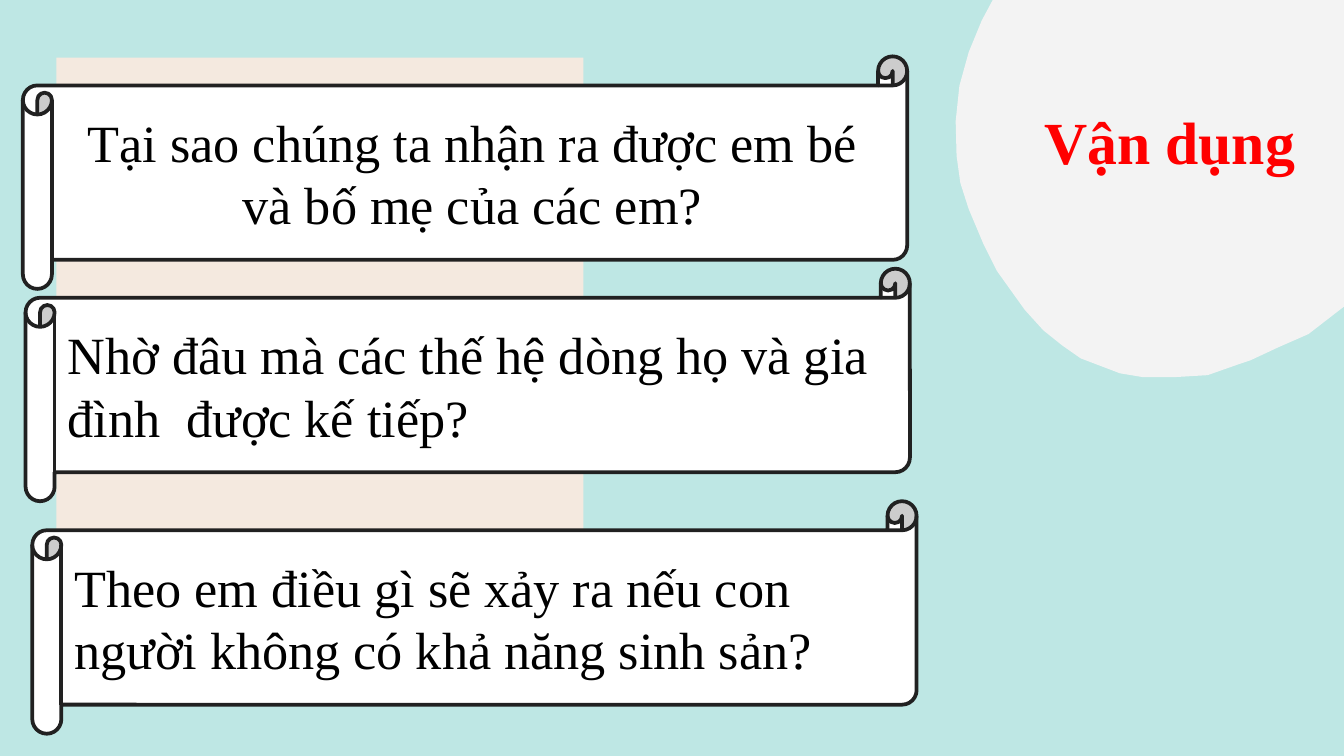
from pptx import Presentation
from pptx.dml.color import RGBColor
from pptx.enum.shapes import MSO_SHAPE as SHAPE
from pptx.enum.text import MSO_ANCHOR as ANCHOR, MSO_AUTO_SIZE as AUTO, PP_ALIGN as ALIGN
from pptx.util import Pt

COLORS = {
    "background": "BEE7E4",
    "panel": "F4E9DF",
    "blob": "F3F3F3",
    "scroll": "FFFFFF",
    "outline": "212121",
    "text": "000000",
    "title": "FF0000",
}
FONT = "Times New Roman"

# Outline of the pale blob in points, counter-clockwise from the upper right
BLOB = [
    (750, -58), (741, -66), (734, -71), (715, -83), (670, -96), (664, -96),
    (649, -94), (617, -82), (593, -71), (575, -55), (562, -45), (542, -19),
    (526, 11), (519, 28), (514, 46), (512, 65), (512.5, 83.5), (514.5, 98),
    (519, 112), (527, 131), (534, 145), (549, 166), (559, 177), (569, 185),
    (579, 192), (600, 200), (612, 202), (624, 202), (630, 202), (647, 201),
    (664, 195), (670, 193), (685, 186), (701, 179), (723, 162), (730, 158),
    (737, 158), (755, 169), (787, 189), (786, 184), (779, 166), (774, 153),
    (762, 125), (762, 116), (768, 100), (780, 65), (786, 50), (789, 37),
    (792, 17), (791, 6), (769, -37),
]

QUESTIONS = [
    (12.24, 30.24, ALIGN.CENTER, "Tại sao chúng ta nhận ra được em bé và bố mẹ của các em?"),
    (13.68, 144, ALIGN.LEFT, "Nhờ đâu mà các thế hệ dòng họ và gia đình  được kế tiếp?"),
    (17.28, 268.56, ALIGN.LEFT, "Theo em điều gì sẽ xảy ra nếu con người không có khả năng sinh sản?"),
]


def rgb(name):
    return RGBColor.from_string(COLORS[name])


def write(tf, text, size=28, color="text", bold=False, align=ALIGN.LEFT, anchor=ANCHOR.MIDDLE):
    tf.vertical_anchor = anchor
    p = tf.paragraphs[0]
    p.alignment = align
    r = p.add_run()
    r.text = text
    r.font.name = FONT
    r.font.size = Pt(size)
    r.font.bold = bold
    r.font.color.rgb = rgb(color)


class Board:
    """Draws on one slide; all lengths are in points."""

    def __init__(self, s):
        self.s = s
        s.background.fill.solid()
        s.background.fill.fore_color.rgb = rgb("background")

    def paint(self, sp, fill, line=None):
        sp.shadow.inherit = False
        sp.fill.solid()
        sp.fill.fore_color.rgb = rgb(fill)
        if line:
            sp.line.color.rgb = rgb(line)
            sp.line.width = Pt(2)
        else:
            sp.line.fill.background()
        return sp

    def shape(self, kind, x, y, w, h, fill, line=None):
        sp = self.s.shapes.add_shape(kind, Pt(x), Pt(y), Pt(w), Pt(h))
        return self.paint(sp, fill, line)

    def outline(self, points, fill):
        start, *rest = [(Pt(x), Pt(y)) for x, y in points]
        builder = self.s.shapes.build_freeform(*start)
        builder.add_line_segments(rest, close=True)
        return self.paint(builder.convert_to_shape(), fill)

    def title(self, text, x, y, w, h):
        sp = self.s.shapes.title
        sp.left, sp.top, sp.width, sp.height = Pt(x), Pt(y), Pt(w), Pt(h)
        tf = sp.text_frame
        tf.word_wrap = False
        tf.auto_size = AUTO.SHAPE_TO_FIT_TEXT
        write(tf, text, size=32, color="title", bold=True, anchor=ANCHOR.TOP)
        self.s.shapes._spTree.append(sp._element)  # bring in front of the blob

    def scroll(self, x, y, align, text):
        sp = self.shape(SHAPE.HORIZONTAL_SCROLL, x, y, 473.76, 124.56, "scroll", "outline")
        sp.text_frame.word_wrap = True
        write(sp.text_frame, text, align=align)


def main():
    prs = Presentation()
    prs.slide_width, prs.slide_height = Pt(720), Pt(405)
    board = Board(prs.slides.add_slide(prs.slide_layouts[5]))
    board.shape(SHAPE.RECTANGLE, 30.24, 30.96, 282.24, 342.72, "panel")
    board.outline(BLOB, "blob")
    board.title("Vận dụng", 552.24, 52.56, 149.76, 46.08)
    for question in QUESTIONS:
        board.scroll(*question)
    prs.save("out.pptx")


if __name__ == "__main__":
    main()
